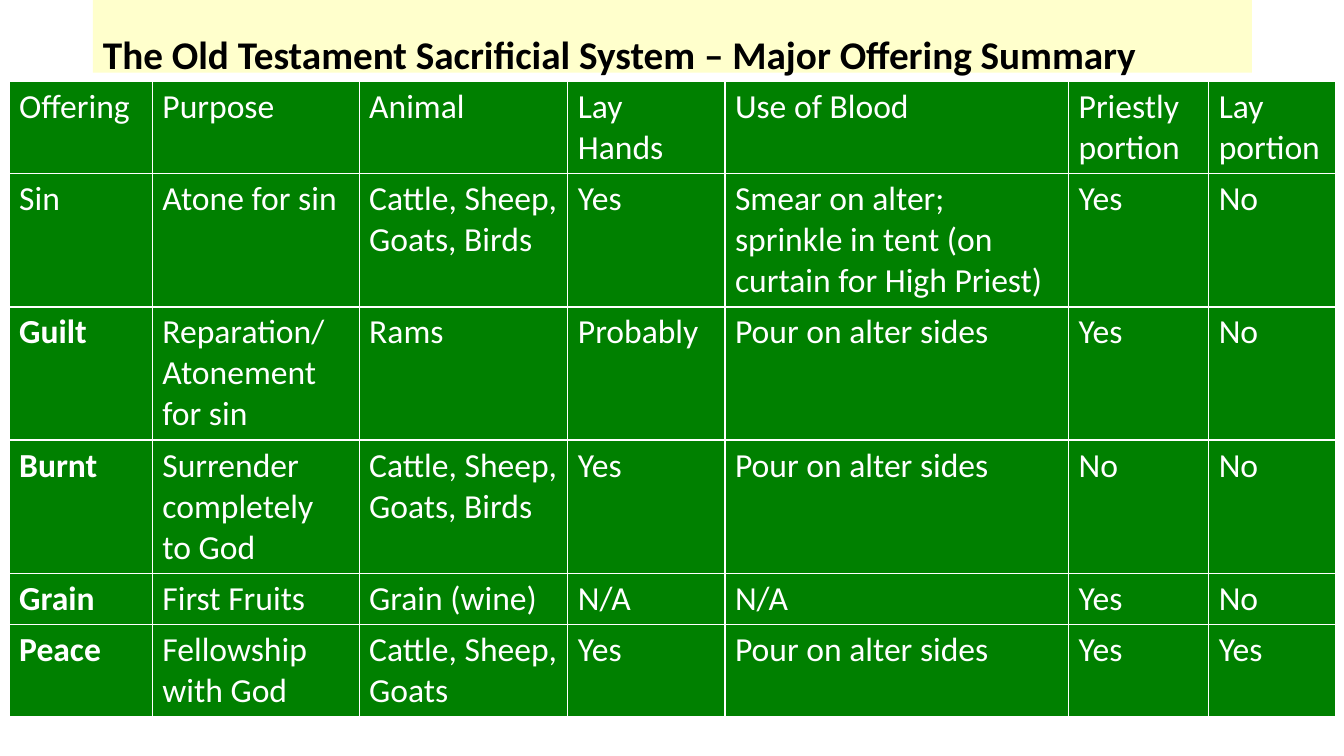
from pptx import Presentation
from pptx.dml.color import RGBColor
from pptx.enum.text import MSO_ANCHOR, MSO_AUTO_SIZE, PP_ALIGN
from pptx.util import Cm, Pt

BLACK = RGBColor(0x00, 0x00, 0x00)
WHITE = RGBColor(0xFF, 0xFF, 0xFF)
CREAM = RGBColor(0xFF, 0xFF, 0xCC)
GREEN = RGBColor(0x00, 0x80, 0x00)

TITLE = "The Old Testament Sacrificial System – Major Offering Summary"
COLUMN_WIDTHS = [3.61, 5.21, 5.26, 3.96, 8.66, 3.53, 3.2]
ROW_HEIGHTS = [2.31, 3.35, 3.35, 3.35, 1.29, 2.31]
OFFERINGS = [
    ["Offering", "Purpose", "Animal", "Lay Hands", "Use of Blood",
     "Priestly\nportion", "Lay portion"],
    ["Sin", "Atone for sin", "Cattle, Sheep,\nGoats, Birds", "Yes",
     "Smear on alter; sprinkle in tent (on curtain for High Priest)", "Yes", "No"],
    ["Guilt", "Reparation/\nAtonement for sin", "Rams", "Probably",
     "Pour on alter sides", "Yes", "No"],
    ["Burnt", "Surrender completely to God", "Cattle, Sheep,\nGoats, Birds", "Yes",
     "Pour on alter sides", "No", "No"],
    ["Grain", "First Fruits", "Grain (wine)", "N/A", "N/A", "Yes", "No"],
    ["Peace", "Fellowship with God", "Cattle, Sheep,\nGoats", "Yes",
     "Pour on alter sides", "Yes", "Yes"],
]
BOLD_OFFERINGS = {"Guilt", "Burnt", "Grain", "Peace"}


class SlideBuilder:
    """Holds the text style and the current slide."""

    font_name = "Calibri"

    def __init__(self, slide):
        self.slide = slide

    def style(self, paragraph, size, color, bold):
        paragraph.alignment = PP_ALIGN.LEFT
        font = paragraph.font
        font.name, font.size, font.bold = self.font_name, Pt(size), bold
        font.color.rgb = color

    def title(self, text, left, top, width, height):
        title = self.slide.shapes.title
        title.left, title.top = Cm(left), Cm(top)
        title.width, title.height = Cm(width), Cm(height)
        title.fill.solid()
        title.fill.fore_color.rgb = CREAM
        frame = title.text_frame
        frame.text = text
        frame.word_wrap = True
        frame.auto_size = MSO_AUTO_SIZE.NONE
        # The heading sits low, at the lower edge of its band
        frame.vertical_anchor = MSO_ANCHOR.TOP
        frame.margin_top, frame.margin_bottom = Cm(0.9), Cm(0)
        paragraph = frame.paragraphs[0]
        paragraph.line_spacing = 0.9
        self.style(paragraph, 28, BLACK, True)

    def table(self, rows, left, top, widths, heights):
        table = self.slide.shapes.add_table(
            len(rows), len(widths), Cm(left), Cm(top),
            Cm(sum(widths)), Cm(sum(heights))).table
        table.horz_banding = False
        for column, width in zip(table.columns, widths):
            column.width = Cm(width)
        for row, height, texts in zip(table.rows, heights, rows):
            row.height = Cm(height)
            for cell, text in zip(row.cells, texts):
                self.cell(cell, text)

    def cell(self, cell, text):
        cell.fill.solid()
        cell.fill.fore_color.rgb = GREEN
        cell.text = text
        for paragraph in cell.text_frame.paragraphs:
            self.style(paragraph, 24, WHITE, text in BOLD_OFFERINGS)


def main():
    presentation = Presentation()
    presentation.slide_width, presentation.slide_height = Cm(33.87), Cm(19.05)
    title_only = presentation.slide_layouts[5]
    builder = SlideBuilder(presentation.slides.add_slide(title_only))

    # Heading band
    builder.title(TITLE, 2.34, 0, 29.21, 1.83)

    # Offering summary
    builder.table(OFFERINGS, 0.23, 2.06, COLUMN_WIDTHS, ROW_HEIGHTS)

    presentation.save("out.pptx")


if __name__ == "__main__":
    main()
